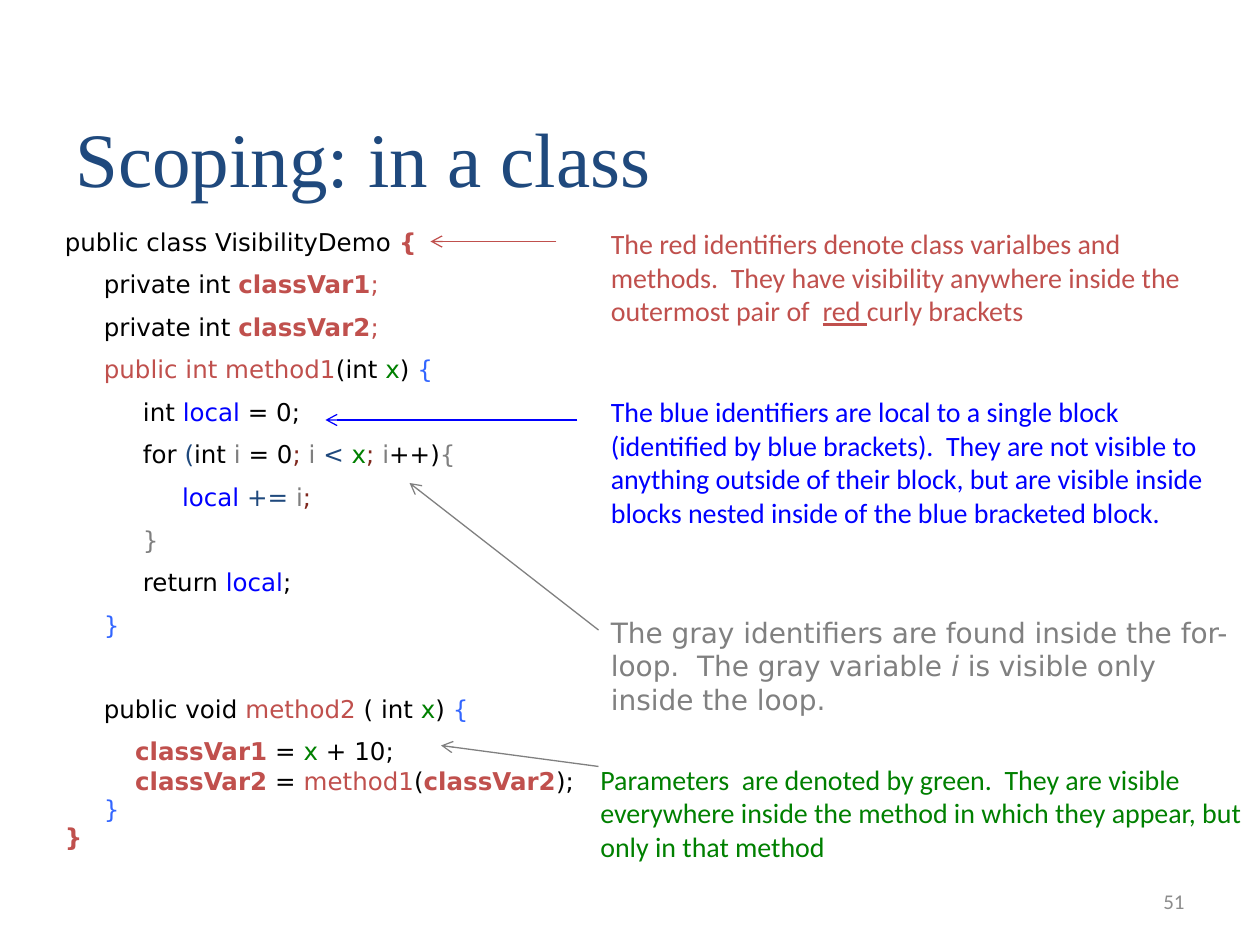
from lxml.etree import SubElement
from pptx import Presentation
from pptx.dml.color import RGBColor
from pptx.enum.shapes import MSO_CONNECTOR
from pptx.enum.text import MSO_ANCHOR, MSO_AUTO_SIZE, PP_ALIGN
from pptx.oxml.ns import qn
from pptx.util import Inches, Pt

COLOURS = {
    "black": "000000", "red": "C0504D", "maroon": "7F271D", "green": "008000",
    "blue": "0000FF", "brace": "3366FF", "navy": "1F497D", "gray": "808080",
    "silver": "7F7F7F", "page": "8C8C8C",
}
GRID = Inches(1 / 12)
INDENT = Inches(0.31)
GAP = Pt(7.5)
BLANK_LINE = Pt(23.8)
BOLD, ITALIC, UNDERLINE = {"bold": True}, {"italic": True}, {"underline": True}
GROW = {"auto_size": MSO_AUTO_SIZE.SHAPE_TO_FIT_TEXT}
TIGHT = {"line_spacing": 0.5}

CODE = [
    (0, [("public class VisibilityDemo ", "black"), ("{", "red", BOLD)], {}),
    (1, [("private int ", "black"), ("classVar1", "red", BOLD), (";", "red")], {}),
    (1, [("private int ", "black"), ("classVar2", "red", BOLD), (";", "red")], {}),
    (1, [("public int method1", "red"), ("(int ", "black"), ("x", "green"),
         (") ", "black"), ("{", "brace")], {}),
    (2, [("int ", "black"), ("local ", "blue"), ("= 0;", "black")], {}),
    (2, [("for ", "black"), ("(", "navy"), ("int ", "black"), ("i ", "silver"),
         ("= 0", "black"), ("; ", "maroon"), ("i ", "silver"), ("< ", "navy"),
         ("x", "green"), ("; ", "maroon"), ("i", "silver"), ("++)", "black"),
         ("{", "gray")], {}),
    (3, [("local ", "blue"), ("+= ", "navy"), ("i", "silver"), (";", "maroon")], {}),
    (2, [("}", "silver")], {}),
    (2, [("return ", "black"), ("local", "blue"), (";", "black")], {}),
    (1, [("}", "brace")], {}),
    (1, [("public void", "black"), (" method2", "red"), (" ( int ", "black"),
         ("x", "green"), (") ", "black"), ("{", "brace")],
     {"space_before": GAP + BLANK_LINE}),
    (1.8, [("classVar1", "red", BOLD), (" = ", "black"), ("x", "green"),
           (" + 10;", "black")], {}),
    (1.8, [("classVar2", "red", BOLD), (" = ", "black"), ("method1", "red"),
           ("(", "black"), ("classVar2", "red", BOLD), (");", "black")], TIGHT),
    (1, [("}", "brace")], TIGHT),
    (0, [("}", "red", BOLD)], TIGHT),
]

NOTES = [
    ((57, 21, 59, 14.2), "Calibri", [
        ("The red identifiers denote class varialbes and methods.  They have "
         "visibility anywhere inside the outermost pair of  ", "red"),
        ("red ", "red", UNDERLINE), ("curly brackets", "red")]),
    ((57, 37, 62, 17.4), "Calibri", [
        ("The blue identifiers are local to a single block (identified by blue "
         "brackets).  They are not visible to anything outside of their block, but "
         "are visible inside blocks nested inside of the blue bracketed block.",
         "blue")]),
    ((57, 58, 63, 10.9), "DejaVu Sans", [
        ("The gray identifiers are found inside the for-loop.  The gray variable ",
         "gray"),
        ("i", "gray", ITALIC), (" is visible only inside the loop.", "gray")]),
    ((56, 72, 64, 10.9), "Calibri", [
        ("Parameters  are denoted by green.  They are visible everywhere inside the "
         "method in which they appear, but only in that method", "green")]),
]

ARROWS = [
    ((53, 23), (41, 23), "red"),
    ((55, 40), (31, 40), "blue"),
    ((57, 60), (39, 46), "gray"),
    ((57, 73), (42, 71), "gray"),
]


def cells(*counts):
    """Turn counts of grid cells into lengths."""
    return [round(count * GRID) for count in counts]


def apply(target, values):
    """Set each named attribute on the target."""
    for name, value in values.items():
        setattr(target, name, value)


def add_spans(para, spans, font):
    """Fill a paragraph with coloured spans."""
    for text, colour, *extras in spans:
        span = para.add_run()
        span.text = text
        apply(span.font, font)
        for extra in extras:
            apply(span.font, extra)
        span.font.color.rgb = RGBColor.from_string(COLOURS[colour])


def add_text(page, place, lines, font, frame_values):
    """Add a wrapped text box holding indented lines."""
    box = page.shapes.add_textbox(*cells(*place))
    frame = box.text_frame
    apply(frame, {"word_wrap": True, **frame_values})
    for index, (level, spans, values) in enumerate(lines):
        para = frame.add_paragraph() if index else frame.paragraphs[0]
        apply(para, {"space_before": GAP if index else Pt(0), **values})
        if level:
            para._p.get_or_add_pPr().set("marL", str(round(level * INDENT)))
        add_spans(para, spans, font)


def add_arrow(page, start, end, colour):
    """Draw a thin line with an open arrowhead at its end."""
    arrow = page.shapes.add_connector(
        MSO_CONNECTOR.STRAIGHT, *cells(*start), *cells(*end))
    arrow.line.width = Pt(0.75)
    arrow.line.color.rgb = RGBColor.from_string(COLOURS[colour])
    SubElement(arrow.line._get_or_add_ln(), qn("a:tailEnd"), type="arrow")
    SubElement(arrow._element.spPr, qn("a:effectLst"))


def main():
    """Build the scoping slide."""
    deck = Presentation()
    apply(deck, {"slide_width": Inches(10), "slide_height": Inches(7.5)})
    page = deck.slides.add_slide(deck.slide_layouts[6])
    add_text(page, (5, 21, 61, 63.6), CODE,
             {"name": "DejaVu Sans", "size": Pt(14)}, GROW)
    for place, name, spans in NOTES:
        add_text(page, place, [(0, spans, {})], {"name": name, "size": Pt(16)}, GROW)
    add_text(page, (6, 9, 106, 15), [(0, [("Scoping: in a class", "navy")], {})],
             {"name": "Times New Roman", "size": Pt(44)},
             {"margin_top": Inches(0.13)})
    for start, end, colour in ARROWS:
        add_arrow(page, start, end, colour)
    add_text(page, (86, 83.4, 28, 4.8),
             [(0, [("51", "page")], {"alignment": PP_ALIGN.RIGHT})],
             {"name": "Calibri", "size": Pt(12)},
             {"vertical_anchor": MSO_ANCHOR.MIDDLE})
    deck.save("out.pptx")


if __name__ == "__main__":
    main()
